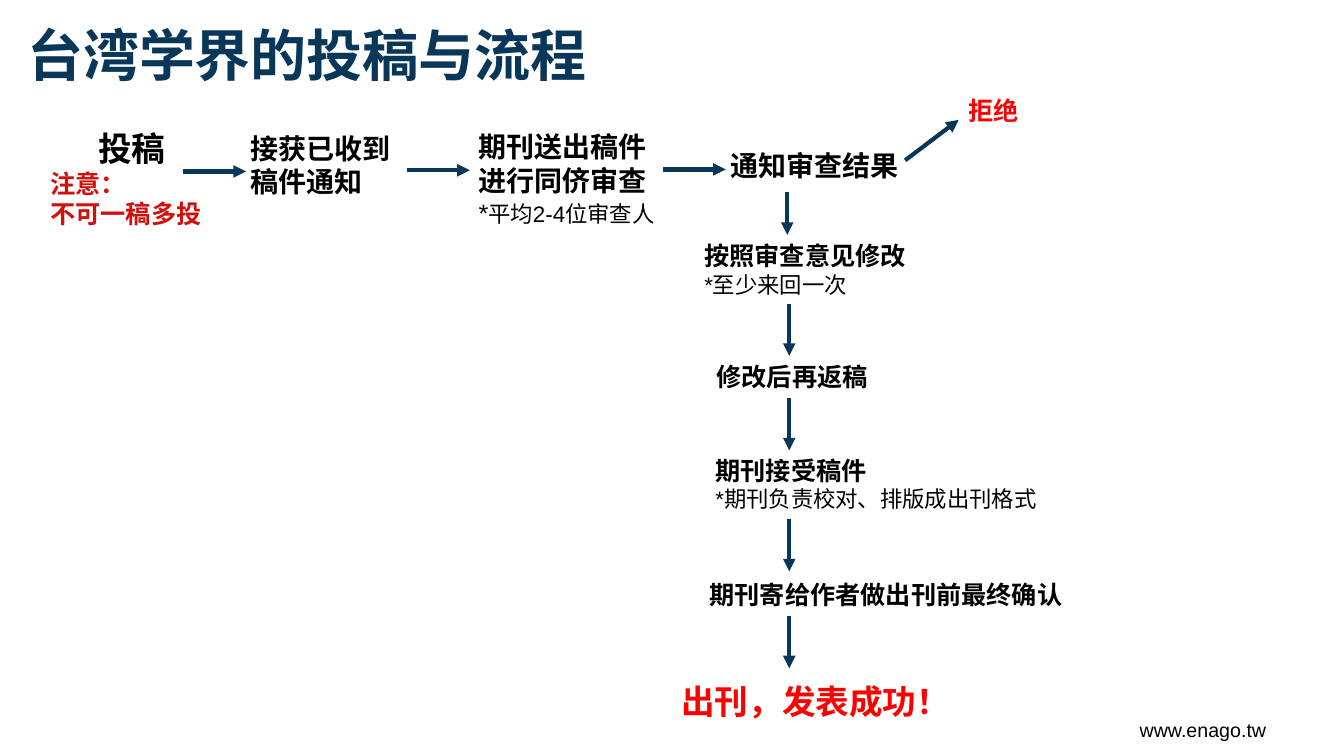
from lxml.etree import SubElement
from pptx import Presentation
from pptx.dml.color import RGBColor
from pptx.enum.shapes import MSO_CONNECTOR as Connector
from pptx.enum.text import MSO_ANCHOR as Anchor, MSO_AUTO_SIZE as AutoSize, PP_ALIGN as Align
from pptx.oxml.ns import qn
from pptx.util import Cm, Pt

COLORS = {"navy": "093759", "black": "000000", "warning": "D20F0C", "red": "FF0000"}


def font_format(size, color="black", bold=True, name="Arial"):
    return {"size": Pt(size), "bold": bold, "name": name, "color": color}


STYLES = {
    "title": font_format(40, "navy", name="Open Sans"),
    "start": font_format(24),
    "warning": font_format(18, "warning"),
    "stage": font_format(20),
    "step": font_format(18),
    "star": font_format(18, bold=False),
    "note": font_format(16, bold=False),
    "reject": font_format(18, "red"),
    "success": font_format(24, "red"),
    "site": font_format(14, bold=False),
}

# Each stage: left, top, width, height in cm, then paragraphs of (text, style) runs
STAGES = [
    # Submission to review result, left to right
    (1.02, 3.1, 4.6, 2.82, [[("投稿", "start")], [("注意：", "warning")],
                            [("不可一稿多投", "warning")]]),
    (6.07, 3.18, 4.67, 1.96, [[("接获已收到稿件通知", "stage")]]),
    (11.81, 3.15, 5.13, 2.74, [[("期刊送出稿件进行同侪审查", "stage")],
                               [("*", "star"), ("平均2-4位审查人", "note")]]),
    (18.16, 3.61, 5.08, 1.12, [[("通知审查结果", "stage")]]),
    (24.16, 2.29, 4.14, 1.02, [[("拒绝", "reject")]]),
    # Revision to publication, top to bottom
    (17.5, 5.94, 7.72, 1.7, [[("按照审查意见修改", "step")], [("*至少来回一次", "note")]]),
    (17.81, 8.99, 4.45, 1.02, [[("修改后再返稿", "step")]]),
    (17.78, 11.35, 8.94, 1.7, [[("期刊接受稿件", "step")],
                               [("*期刊负责校对、排版成出刊格式", "note")]]),
    (17.63, 14.48, 9.5, 1.02, [[("期刊寄给作者做出刊前最终确认", "step")]]),
    (16.92, 17.04, 8.08, 1.27, [[("出刊，发表成功！", "success")]]),
]

ACROSS_LENGTH, DOWN_LENGTH, DOWN_X = 1.58, 1.32, 19.89
ACROSS_STARTS = [(4.62, 4.32), (10.26, 4.29), (16.71, 4.27)]
DOWN_TOPS = [7.65, 10.03, 13.08, 15.52]


def add_run(paragraph, text, style):
    run = paragraph.add_run()
    run.text = text
    for attribute, value in STYLES[style].items():
        if attribute == "color":
            run.font.color.rgb = RGBColor.from_string(COLORS[value])
        else:
            setattr(run.font, attribute, value)


def add_title(slide, text):
    title = slide.shapes.title
    place = {"left": Cm(0.43), "top": Cm(1.27), "width": Cm(15.37), "height": Cm(1.22)}
    for attribute, value in place.items():
        setattr(title, attribute, value)
    frame = title.text_frame
    frame.vertical_anchor = Anchor.TOP
    frame.auto_size = AutoSize.NONE
    heading = frame.paragraphs[0]
    heading.alignment = Align.LEFT
    heading.line_spacing = Pt(23)
    add_run(heading, text, "title")


def add_text(slide, left, top, width, height, paragraphs, wrap=True):
    box = slide.shapes.add_textbox(Cm(left), Cm(top), Cm(width), Cm(height))
    frame = box.text_frame
    frame.word_wrap = wrap
    frame.auto_size = AutoSize.SHAPE_TO_FIT_TEXT
    for index, runs in enumerate(paragraphs):
        paragraph = frame.add_paragraph() if index else frame.paragraphs[0]
        for text, style in runs:
            add_run(paragraph, text, style)
    return frame


def add_arrow(slide, x, y, across, down):
    arrow = slide.shapes.add_connector(
        Connector.STRAIGHT, Cm(x), Cm(y), Cm(x + across), Cm(y + down))
    arrow.line.width = Pt(3)
    arrow.line.color.rgb = RGBColor.from_string(COLORS["navy"])
    SubElement(arrow.line._get_or_add_ln(), qn("a:tailEnd"), type="triangle")
    SubElement(arrow._element.spPr, qn("a:effectLst"))


def main():
    deck = Presentation()
    deck.slide_width, deck.slide_height = Cm(33.87), Cm(19.05)
    slide = deck.slides.add_slide(deck.slide_layouts[5])
    add_title(slide, "台湾学界的投稿与流程")

    # Stages of the process, with the opening one centred
    frames = [add_text(slide, *stage) for stage in STAGES]
    frames[0].paragraphs[0].alignment = Align.CENTER

    # Arrows between the stages
    for x, y in ACROSS_STARTS:
        add_arrow(slide, x, y, ACROSS_LENGTH, 0)
    add_arrow(slide, 22.81, 4.04, 1.35, -1.02)
    add_arrow(slide, 19.84, 4.83, 0, 1.09)
    for y in DOWN_TOPS:
        add_arrow(slide, DOWN_X, y, 0, DOWN_LENGTH)

    # Web address in the footer
    add_text(slide, 28.47, 17.96, 3.73, 0.86, [[("www.enago.tw", "site")]], wrap=False)
    deck.save("out.pptx")


if __name__ == "__main__":
    main()
